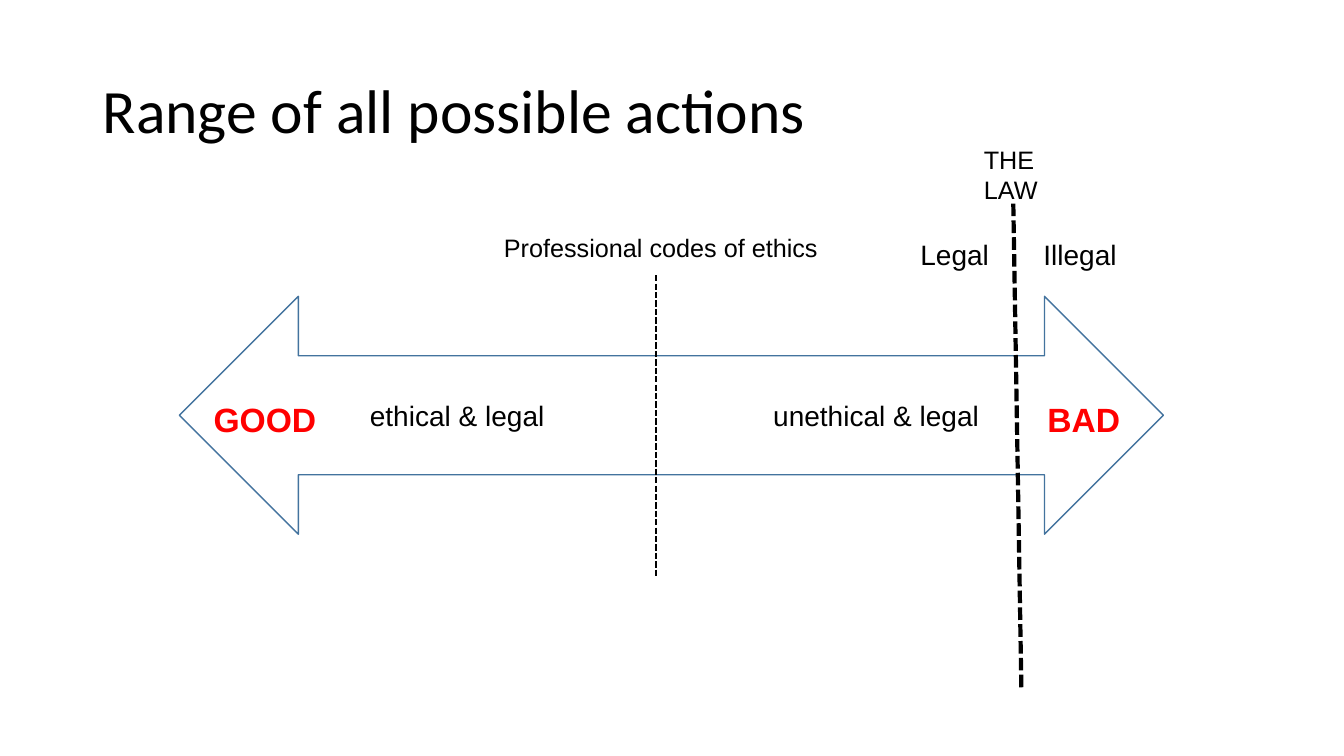
from dataclasses import dataclass

import lxml.etree
import pptx
import pptx.dml.color
import pptx.enum.dml
import pptx.enum.shapes
import pptx.enum.text
import pptx.oxml.ns
import pptx.util

Inches = pptx.util.Inches
COLORS = {"text": "000000", "extreme": "FF0000", "outline": "43739E"}


@dataclass
class Label:
    text: str
    left: float
    top: float
    width: float
    height: float
    size: float
    color: str = "text"
    bold: bool = False
    font: str = "Arial"
    line_spacing: float = 1.0
    anchor: str = "TOP"
    tabs: tuple[float, ...] = ()


@dataclass
class Boundary:
    start: tuple[float, float]
    end: tuple[float, float]
    weight: float


TITLE = Label("Range of all possible actions", 0.92, 0.4, 11.5, 1.45, 44,
              font="Calibri", line_spacing=0.9, anchor="MIDDLE")
LAW_BOUNDARY = Boundary((10.05, 2.02), (10.13, 6.82), 3)
ETHICS_BOUNDARY = Boundary((6.51, 2.73), (6.51, 5.72), 1.5)
LABELS = [
    Label("BAD", 10.29, 3.91, 1.5, 0.51, 24, "extreme", True),
    Label("GOOD", 2.02, 3.91, 1.5, 0.51, 24, "extreme", True),
    Label("Legal\tIllegal", 9.03, 2.31, 2.52, 0.44, 20, tabs=(1.22,)),
    Label("THE LAW", 9.66, 1.38, 0.79, 0.71, 18),
    Label("\tethical & legal\tunethical & legal", 2.57, 3.9, 7.88, 0.44, 20, tabs=(1, 5)),
    Label("Professional codes of ethics", 4.9, 2.26, 3.54, 0.4, 18),
]


def rgb(name: str) -> pptx.dml.color.RGBColor:
    return pptx.dml.color.RGBColor.from_string(COLORS[name])


def set_tabs(para, positions: tuple[float, ...]) -> None:
    qn = pptx.oxml.ns.qn
    tab_list = lxml.etree.SubElement(para._p.get_or_add_pPr(), qn("a:tabLst"))
    for position in positions:
        lxml.etree.SubElement(tab_list, qn("a:tab"), pos=str(Inches(position)), algn="l")


def draw_label(page, label: Label) -> None:
    box = page.shapes.add_textbox(*map(Inches, (label.left, label.top, label.width, label.height)))
    frame = box.text_frame
    frame.word_wrap = True
    frame.vertical_anchor = pptx.enum.text.MSO_ANCHOR[label.anchor]
    para = frame.paragraphs[0]
    para.line_spacing = label.line_spacing
    if label.tabs:
        set_tabs(para, label.tabs)
    span = para.add_run()
    span.text = label.text
    formats = {"name": label.font, "size": pptx.util.Pt(label.size), "bold": label.bold}
    for attribute, value in formats.items():
        setattr(span.font, attribute, value)
    span.font.color.rgb = rgb(label.color)


def draw_boundary(page, boundary: Boundary) -> None:
    connector = page.shapes.add_connector(
        pptx.enum.shapes.MSO_CONNECTOR.STRAIGHT, *map(Inches, boundary.start + boundary.end))
    connector.line.color.rgb = rgb("text")
    formats = {"width": pptx.util.Pt(boundary.weight),
               "dash_style": pptx.enum.dml.MSO_LINE.SQUARE_DOT}
    for attribute, value in formats.items():
        setattr(connector.line, attribute, value)
    lxml.etree.SubElement(connector._element.spPr, pptx.oxml.ns.qn("a:effectLst"))


def draw_range_arrow(page) -> None:
    arrow = page.shapes.add_shape(
        pptx.enum.shapes.MSO_SHAPE.LEFT_RIGHT_ARROW, *map(Inches, (1.78, 2.94, 9.76, 2.36)))
    arrow.shadow.inherit = False
    arrow.fill.background()
    arrow.line.color.rgb = rgb("outline")
    arrow.line.width = pptx.util.Pt(1)


def main() -> None:
    deck = pptx.Presentation()
    deck.slide_width = Inches(13.33)
    deck.slide_height = Inches(7.5)
    page = deck.slides.add_slide(deck.slide_layouts[6])
    draw_label(page, TITLE)
    draw_range_arrow(page)
    for boundary in (LAW_BOUNDARY, ETHICS_BOUNDARY):
        draw_boundary(page, boundary)
    for label in LABELS:
        draw_label(page, label)
    deck.save("out.pptx")


if __name__ == "__main__":
    main()
